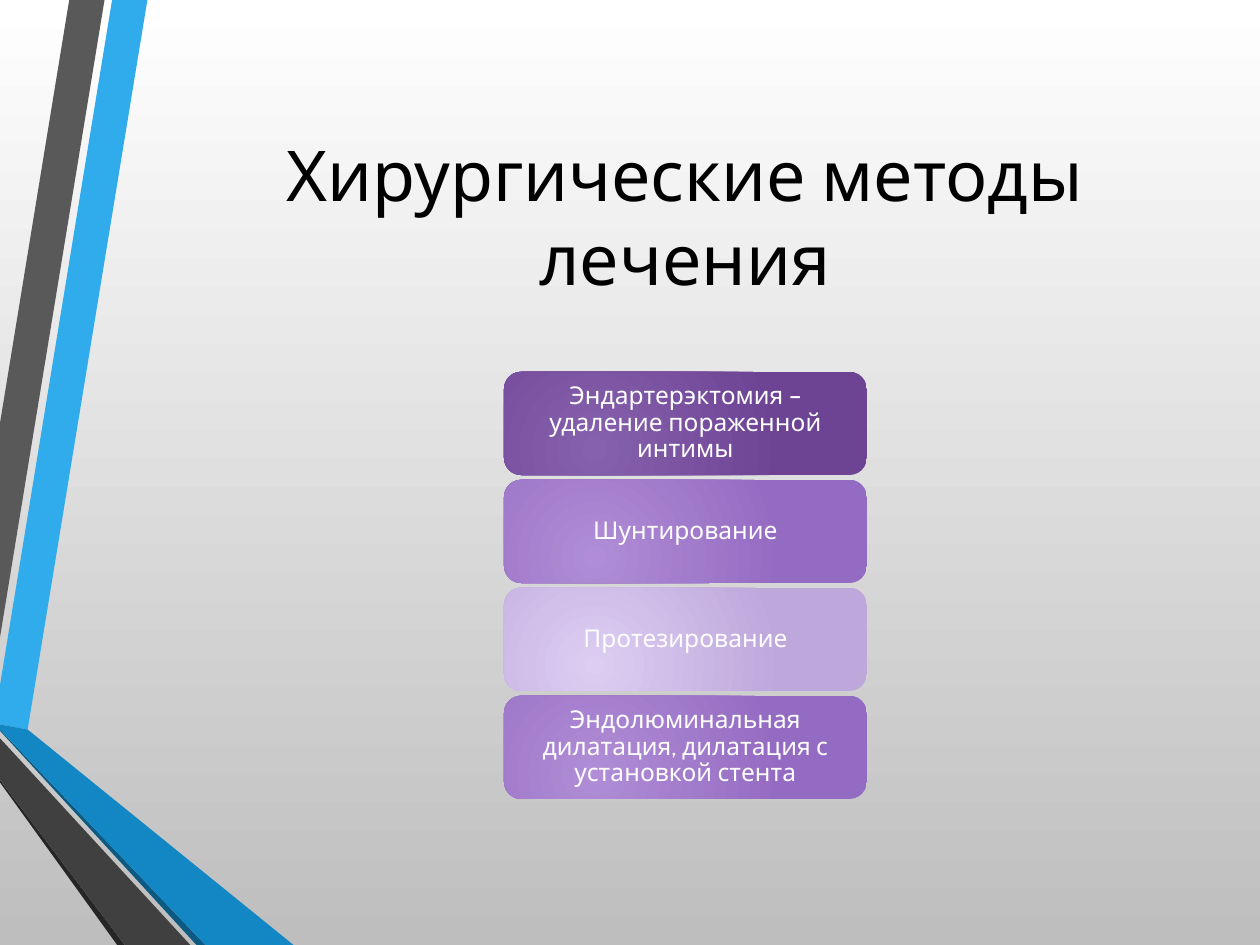
import dataclasses

import lxml.etree
import pptx
import pptx.dml.color
import pptx.enum.shapes
import pptx.enum.text
import pptx.oxml.ns
import pptx.util

WIDE, HIGH = 10, 7.5
FONT = "Cabin"
UNIT = 9144  # a hundredth of an inch, the step of the ribbon grid

# Card column, in inches
LEFT, TOP = 4, 2.95
CARD_W, CARD_H = 2.88, 0.82
PITCH = CARD_H * 1.045


@dataclasses.dataclass
class Ribbon:
    color: str
    points: list[tuple[int, int]]


@dataclasses.dataclass
class Card:
    text: str
    inner: str
    outer: str


RIBBONS = [
    Ribbon("30ACEC", [(0, 544), (0, 575), (22, 579), (117, 0), (89, 0)]),
    Ribbon("595959", [(83, 0), (55, 0), (0, 336), (0, 506)]),
    Ribbon("262626", [(0, 619), (0, 621), (93, 750), (99, 750)]),
    Ribbon("0C5A82", [(0, 579), (0, 580), (156, 750), (163, 750)]),
    Ribbon("1287C3", [(0, 579), (163, 750), (233, 750), (22, 579), (0, 575)]),
    Ribbon("404040", [(0, 619), (99, 750), (151, 750), (0, 586)]),
]

CARDS = [
    Card("Эндартерэктомия – удаление пораженной интимы", "8661AD", "6D4394"),
    Card("Шунтирование", "B08DD6", "946BC2"),
    Card("Протезирование", "DDCDF2", "BEA7DB"),
    Card("Эндолюминальная дилатация, дилатация с установкой стента",
         "B08DD6", "946BC2"),
]


def tint(code: str) -> pptx.dml.color.RGBColor:
    return pptx.dml.color.RGBColor.from_string(code)


def blend(fill, first: str, last: str) -> None:
    """Give a fill a top-down blend of two colours."""
    fill.gradient()
    fill.gradient_angle = 270
    for stop, code in zip(fill.gradient_stops, (first, last)):
        stop.color.rgb = tint(code)


def glow(shape) -> None:
    """Turn the straight blend of a shape into a round one."""
    tag = pptx.oxml.ns.qn
    line = shape.fill._xPr.find(tag("a:gradFill")).find(tag("a:lin"))
    ring = lxml.etree.Element(tag("a:path"), {"path": "circle"})
    lxml.etree.SubElement(ring, tag("a:fillToRect"),
                          {"l": "50000", "t": "100000", "r": "100000", "b": "50000"})
    line.getparent().replace(line, ring)


def write(shape, text: str, size: float, color: str,
          side: float, edge: float, pitch: float = 1) -> None:
    """Set centred text with side and edge insets in inches."""
    frame = shape.text_frame
    frame.word_wrap = True
    frame.vertical_anchor = pptx.enum.text.MSO_ANCHOR.MIDDLE
    frame.margin_left = frame.margin_right = pptx.util.Inches(side)
    frame.margin_top = frame.margin_bottom = pptx.util.Inches(edge)
    para = frame.paragraphs[0]
    para.alignment = pptx.enum.text.PP_ALIGN.CENTER
    para.line_spacing = pitch
    run = para.add_run()
    run.text = text
    run.font.name = FONT
    run.font.size = pptx.util.Pt(size)
    run.font.color.rgb = tint(color)


def box(left: float, top: float, width: float, height: float) -> list:
    return [pptx.util.Inches(side) for side in (left, top, width, height)]


def draw_ribbon(slide, ribbon: Ribbon) -> None:
    pen = slide.shapes.build_freeform(*ribbon.points[0], scale=UNIT)
    pen.add_line_segments(ribbon.points[1:], close=True)
    shape = pen.convert_to_shape()
    shape.shadow.inherit = False
    shape.fill.solid()
    shape.fill.fore_color.rgb = tint(ribbon.color)
    shape.line.fill.background()


def draw_card(slide, card: Card, row: int) -> None:
    shape = slide.shapes.add_shape(
        pptx.enum.shapes.MSO_SHAPE.ROUNDED_RECTANGLE,
        *box(LEFT, TOP + row * PITCH, CARD_W, CARD_H))
    shape.shadow.inherit = False
    shape.line.fill.background()
    blend(shape.fill, card.inner, card.outer)
    glow(shape)
    write(shape, card.text, 14, "FFFFFF", 0.1, 0.07, 0.9)


def main() -> None:
    deck = pptx.Presentation()
    deck.slide_width = pptx.util.Inches(WIDE)
    deck.slide_height = pptx.util.Inches(HIGH)
    slide = deck.slides.add_slide(deck.slide_layouts[6])

    # Backdrop and ribbons
    blend(slide.background.fill, "FFFFFF", "BEBEBE")
    for ribbon in RIBBONS:
        draw_ribbon(slide, ribbon)

    # Title
    title = slide.shapes.add_textbox(*box(1.44, HIGH / 10, 7.99, 1.92))
    write(title, "Хирургические методы лечения", 40, "000000", 0.1, 0.05)

    # Methods, one card a row
    for row, card in enumerate(CARDS):
        draw_card(slide, card, row)

    deck.save("out.pptx")


if __name__ == "__main__":
    main()
